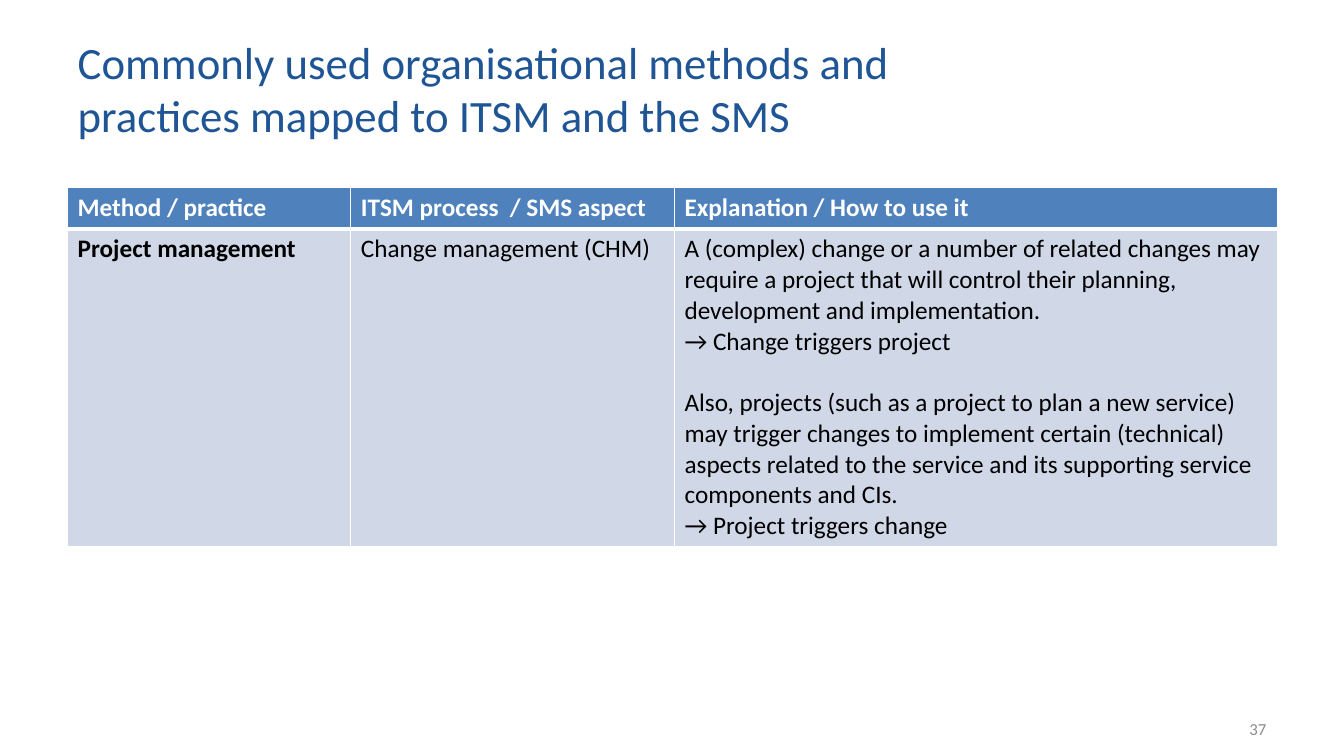
"""Build the slide that maps organisational methods to ITSM and the SMS."""
import dataclasses
import typing

import lxml.etree
import pptx
import pptx.dml.color
import pptx.enum.text
import pptx.oxml.ns
import pptx.util

RGB = pptx.dml.color.RGBColor
ALIGN = pptx.enum.text.PP_ALIGN
MIDDLE = pptx.enum.text.MSO_ANCHOR.MIDDLE
Pt = pptx.util.Pt
qn = pptx.oxml.ns.qn

TITLE_BLUE = RGB(0x20, 0x55, 0x95)
HEADER_BLUE = RGB(0x4F, 0x81, 0xBD)
BODY_BLUE = RGB(0xD0, 0xD8, 0xE8)
WHITE = RGB(0xFF, 0xFF, 0xFF)
BLACK = RGB(0, 0, 0)
GREY = RGB(0x8C, 0x8C, 0x8C)

WIDTH, HEIGHT = 13.33, 7.5
MARGIN = 0.67
TABLE_TOP = 1.86
COLUMN_WIDTHS = (2.81, 3.21, 5.98)
ROW_HEIGHTS = (0.41, 3.14)
LINE_GAP = Pt(22)


@dataclasses.dataclass(frozen=True)
class Box:
    """Position and size in inches."""
    left: float
    top: float
    width: float
    height: float

    def emu(self) -> dict[str, int]:
        """Return the position and size as shape attributes."""
        return {k: pptx.util.Inches(v) for k, v in dataclasses.asdict(self).items()}


@dataclasses.dataclass(frozen=True)
class Style:
    """Character format of a text."""
    size: int
    color: RGB
    bold: bool = False


@dataclasses.dataclass(frozen=True)
class Cell:
    """Paragraphs of a table cell and their look."""
    paragraphs: tuple[str, ...]
    style: Style
    fill: RGB
    bottom: int = 1
    spaced: tuple[int, ...] = ()


HEADER = Style(18, WHITE, True)
BODY = Style(18, BLACK)
HEADINGS = ("Method / practice", "ITSM process  / SMS aspect", "Explanation / How to use it")
EXPLANATION = (
    "A (complex) change or a number of related changes may require a project "
    "that will control their planning, development and implementation.",
    "→ Change triggers project",
    "Also, projects (such as a project to plan a new service) may trigger changes "
    "to implement certain (technical) aspects related to the service and its "
    "supporting service components and CIs.",
    "→ Project triggers change",
)
ROWS = (
    tuple(Cell((h,), HEADER, HEADER_BLUE, bottom=3) for h in HEADINGS),
    (
        Cell(("Project management",), Style(18, BLACK, True), BODY_BLUE),
        Cell(("Change management (CHM)",), BODY, BODY_BLUE),
        Cell(EXPLANATION, BODY, BODY_BLUE, spaced=(2,)),
    ),
)


def set_all(target: typing.Any, values: dict[str, typing.Any]) -> None:
    """Set every named attribute of the target."""
    for name, value in values.items():
        setattr(target, name, value)


def write(tf: typing.Any, paragraphs: tuple[str, ...], style: Style,
          align: ALIGN = ALIGN.LEFT, spaced: tuple[int, ...] = ()) -> None:
    """Write formatted paragraphs into a text frame."""
    for i, text in enumerate(paragraphs):
        p = tf.add_paragraph() if i else tf.paragraphs[0]
        p.alignment = align
        if i in spaced:
            p.space_before = LINE_GAP
        r = p.add_run()
        r.text = text
        set_all(r.font, {"name": "Calibri", "size": Pt(style.size), "bold": style.bold})
        r.font.color.rgb = style.color


def draw_text(sp: typing.Any, box: Box, text: str, style: Style, align: ALIGN) -> None:
    """Place a shape and fill it with one line of text."""
    set_all(sp, box.emu())
    tf = sp.text_frame
    set_all(tf, {"word_wrap": True, "vertical_anchor": MIDDLE,
                 "auto_size": pptx.enum.text.MSO_AUTO_SIZE.NONE})
    write(tf, (text,), style, align)


def draw_cell(tc: typing.Any, cell: Cell) -> None:
    """Draw the borders, fill and text of a table cell."""
    tc_pr = tc._tc.get_or_add_tcPr()
    for side, width in {"L": 1, "R": 1, "T": 1, "B": cell.bottom}.items():
        ln = lxml.etree.SubElement(tc_pr, qn(f"a:ln{side}"), w=str(Pt(width)))
        fill = lxml.etree.SubElement(ln, qn("a:solidFill"))
        lxml.etree.SubElement(fill, qn("a:srgbClr"), val=str(WHITE))
    tc.fill.solid()
    tc.fill.fore_color.rgb = cell.fill
    write(tc.text_frame, cell.paragraphs, cell.style, spaced=cell.spaced)


def draw_table(s: typing.Any) -> None:
    """Draw the table of methods."""
    box = Box(MARGIN, TABLE_TOP, sum(COLUMN_WIDTHS), sum(ROW_HEIGHTS))
    table = s.shapes.add_table(len(ROWS), len(COLUMN_WIDTHS), **box.emu()).table
    for column, width in zip(table.columns, COLUMN_WIDTHS):
        column.width = pptx.util.Inches(width)
    for i, (height, row) in enumerate(zip(ROW_HEIGHTS, ROWS)):
        table.rows[i].height = pptx.util.Inches(height)
        for j, cell in enumerate(row):
            draw_cell(table.cell(i, j), cell)


def main() -> None:
    """Build and save the presentation."""
    prs = pptx.Presentation()
    set_all(prs, {"slide_width": pptx.util.Inches(WIDTH),
                  "slide_height": pptx.util.Inches(HEIGHT)})
    s = prs.slides.add_slide(prs.slide_layouts[5])
    draw_text(s.shapes.title, Box(MARGIN, 0.04 * HEIGHT, 9.91, 1.15),
              "Commonly used organisational methods and practices mapped to ITSM and the SMS",
              Style(32, TITLE_BLUE), ALIGN.LEFT)
    draw_table(s)
    number = Box(WIDTH - MARGIN - 3.11, 7.03, 3.11, 0.4)
    draw_text(s.shapes.add_textbox(**number.emu()), number, "37", Style(12, GREY), ALIGN.RIGHT)
    prs.save("out.pptx")


if __name__ == "__main__":
    main()
